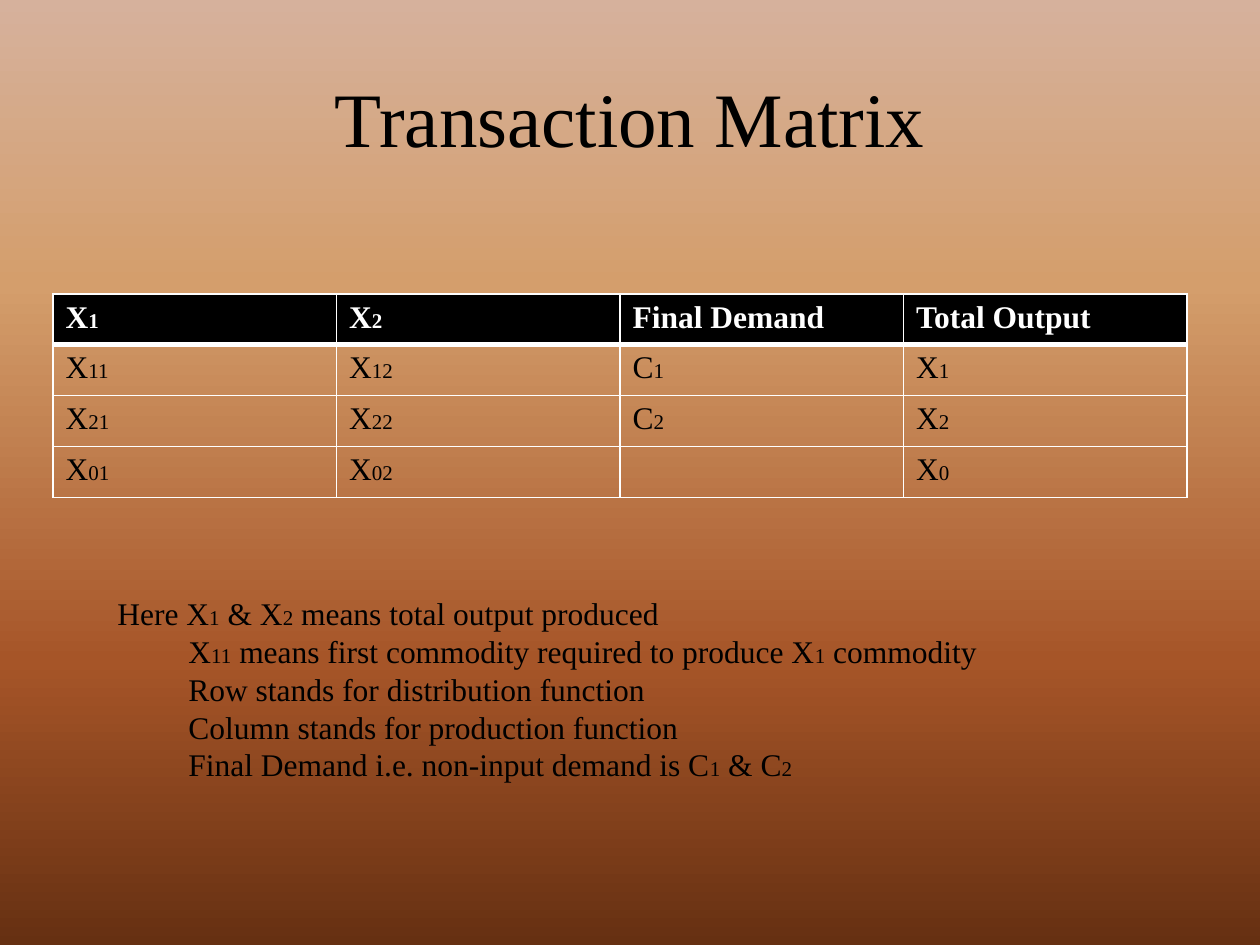
from lxml import etree
from pptx import Presentation
from pptx.dml.color import RGBColor
from pptx.enum import text
from pptx.oxml import ns
from pptx import util as u

C = {"ink": "000000", "line": "FFFFFF", "sky": "D6B19C",
     "sand": "D49E6C", "rust": "A65528", "earth": "663012"}
FONT = "Times New Roman"
HEAD = ["X|1", "X|2", "Final Demand", "Total Output"]
BODY = [["X|11", "X|12", "C|1", "X|1"],
        ["X|21", "X|22", "C|2", "X|2"],
        ["X|01", "X|02", "", "X|0"]]
NOTES = ["Here X|1| & X|2| means total output produced",
         "X|11| means first commodity required to produce X|1| commodity",
         "Row stands for distribution function",
         "Column stands for production function",
         "Final Demand i.e. non-input demand is C|1| & C|2"]


def px(n):
    return u.Emu(round(n * 914400 / 126))


def rgb(name):
    return RGBColor.from_string(C[name])


def write(p, line, color="ink", size=18, bold=False):
    p.font.name = FONT
    p.font.color.rgb = rgb(color)
    p.font.bold = bold
    for i, part in enumerate(line.split("|")):
        if part:
            r = p.add_run()
            r.text = part
            r.font.size = u.Pt(12 if i % 2 else size)


def background(s):
    fill = s.background.fill
    fill.gradient()
    fill.gradient_angle = 270
    stops = s.element.find(".//" + ns.qn("a:gsLst"))
    for stop in list(stops):
        stops.remove(stop)
    for pos, name in ((0, "sky"), (30, "sand"), (70, "rust"), (100, "earth")):
        stop = etree.SubElement(stops, ns.qn("a:gs"), pos=str(pos * 1000))
        etree.SubElement(stop, ns.qn("a:srgbClr"), val=C[name])


def text_frame(s, x, y, w, h):
    tf = s.shapes.add_textbox(px(x), px(y), px(w), px(h)).text_frame
    tf.word_wrap = True
    return tf


def title(s, x, y, w, h):
    tf = text_frame(s, x, y, w, h)
    tf.vertical_anchor = text.MSO_ANCHOR.MIDDLE
    p = tf.paragraphs[0]
    p.alignment = text.PP_ALIGN.CENTER
    write(p, "Transaction Matrix", size=44)


def borders(cell, widths):
    tcPr = cell._tc.get_or_add_tcPr()
    for i, (side, width) in enumerate(widths.items()):
        ln = etree.Element(ns.qn("a:ln" + side), w=str(u.Pt(width)))
        fill = etree.SubElement(ln, ns.qn("a:solidFill"))
        etree.SubElement(fill, ns.qn("a:srgbClr"), val=C["line"])
        tcPr.insert(i, ln)


def matrix(s, x, y, w, head_h, row_h):
    rows = [HEAD] + BODY
    h = head_h + row_h * len(BODY)
    table = s.shapes.add_table(len(rows), len(HEAD), px(x), px(y), px(w), px(h)).table
    table.horz_banding = False
    for i, row in enumerate(rows):
        head = i == 0
        table.rows[i].height = px(head_h if head else row_h)
        for j, line in enumerate(row):
            cell = table.cell(i, j)
            if head:
                cell.fill.solid()
                cell.fill.fore_color.rgb = rgb("ink")
            else:
                cell.fill.background()
            borders(cell, {"L": 1, "R": 1, "T": 3 if i == 1 else 1, "B": 3 if head else 1})
            write(cell.text_frame.paragraphs[0], line, "line" if head else "ink", bold=head)


def notes(s, x, y, w, h, indent):
    tf = text_frame(s, x, y, w, h)
    for i, line in enumerate(NOTES):
        p = tf.add_paragraph() if i else tf.paragraphs[0]
        if i:
            p._p.get_or_add_pPr().set("marL", str(px(indent)))
        write(p, line)


def main():
    prs = Presentation()
    prs.slide_width, prs.slide_height = px(1260), px(945)
    s = prs.slides.add_slide(prs.slide_layouts[6])
    background(s)
    title(s, 63, 38, 1134, 158)
    matrix(s, 53, 294, 1134, 47, 51)
    notes(s, 105, 588, 977, 208, 71)
    prs.save("out.pptx")


if __name__ == "__main__":
    main()
